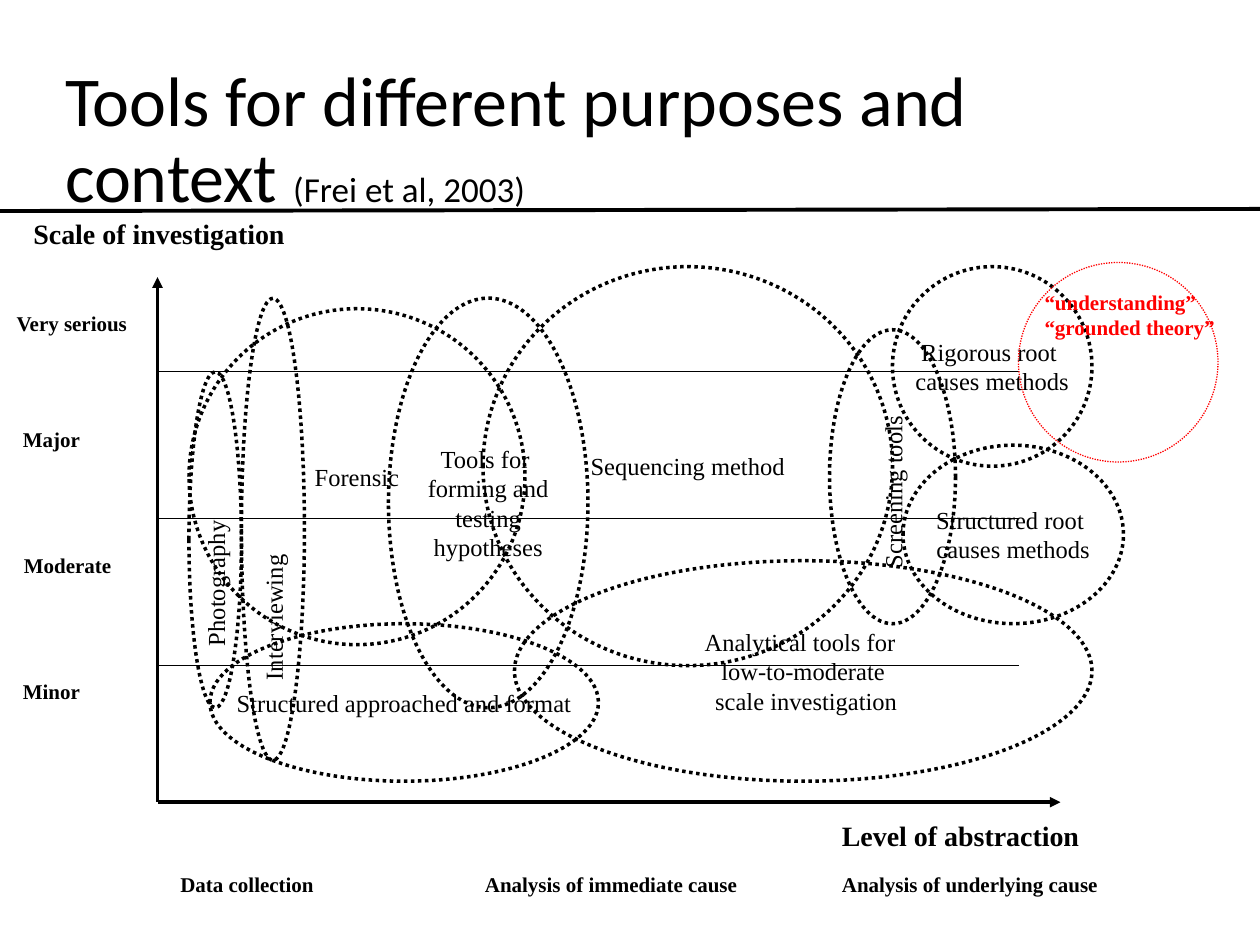
from pptx import Presentation
from pptx.dml.color import RGBColor
from pptx.enum.dml import MSO_LINE
from pptx.enum.shapes import MSO_CONNECTOR, MSO_SHAPE
from pptx.enum.text import MSO_ANCHOR as ANCHOR, MSO_AUTO_SIZE as AUTO, PP_ALIGN as ALIGN
from pptx.oxml.ns import qn
from pptx.util import Pt
from lxml.etree import SubElement

BLACK = RGBColor(0x00, 0x00, 0x00)
RED = RGBColor(0xFF, 0x00, 0x00)
SERIF = "Times New Roman"
SANS = "Calibri"
SCALE = 7620  # EMU per px, 120 px to the inch


def px(*lengths):
    return [round(length * SCALE) for length in lengths]


def write(frame, text, *, size=12, bold=False, color=BLACK, font=SERIF,
          align=ALIGN.LEFT, anchor=ANCHOR.TOP, wrap=False):
    """Fill a text frame, one paragraph for each line of text."""
    frame.word_wrap = wrap
    frame.vertical_anchor = anchor
    for index, line in enumerate(text.split("\n")):
        para = frame.paragraphs[0] if index == 0 else frame.add_paragraph()
        para.alignment = align
        add_span(para, line, size=size, bold=bold, color=color, font=font)


def add_span(para, text, *, size, bold=False, color=BLACK, font=SERIF):
    span = para.add_run()
    span.text = text
    span.font.size = Pt(size)
    span.font.bold = bold
    span.font.name = font
    span.font.color.rgb = color


def add_label(page, text, left, top, width, height, **style):
    box = page.shapes.add_textbox(*px(left, top, width, height))
    write(box.text_frame, text, **style)
    box.text_frame.auto_size = AUTO.SHAPE_TO_FIT_TEXT


def add_line(page, start, end, weight, *, dash=None, head=False, tail=False):
    line = page.shapes.add_connector(MSO_CONNECTOR.STRAIGHT, *px(*start, *end))
    line.line.color.rgb = BLACK
    line.line.width = Pt(weight)
    if dash:
        line.line.dash_style = dash
    outline = line.line._get_or_add_ln()
    for wanted, tag in ((head, "a:headEnd"), (tail, "a:tailEnd")):
        if wanted:
            SubElement(outline, qn(tag), type="triangle")
    SubElement(line._element.spPr, qn("a:effectLst"))


def add_ellipse(page, left, top, width, height, *, color=BLACK, weight=2):
    ellipse = page.shapes.add_shape(MSO_SHAPE.OVAL, *px(left, top, width, height))
    ellipse.shadow.inherit = False
    ellipse.fill.background()
    ellipse.line.color.rgb = color
    ellipse.line.width = Pt(weight)
    ellipse.line.dash_style = MSO_LINE.ROUND_DOT
    return ellipse


def place_title(page, left, top, width, height):
    title = page.shapes.title
    title.left, title.top, title.width, title.height = px(left, top, width, height)
    frame = title.text_frame
    write(frame, "Tools for different purposes and context ", size=40,
          font=SANS, anchor=ANCHOR.MIDDLE, wrap=True)
    frame.auto_size = AUTO.NONE
    para = frame.paragraphs[0]
    para.line_spacing = 0.9
    add_span(para, "(Frei et al, 2003)", size=20, font=SANS)


def place_tools(page, left, top):
    """Dotted ellipses, one per tool; upright ones read from bottom to top."""
    tools = [  # text, offset x, offset y, width, height, upright, mirrored
        ("Photography", 30, 90, 50, 320, True, True),
        ("Interviewing", 80, 20, 60, 440, True, True),
        ("Structured approached and format", 50, 330, 370, 150, False, False),
        ("Forensic", 30, 30, 320, 320, False, False),
        ("Tools for \nforming and\n testing \nhypotheses", 220, 20, 190, 390, False, False),
        ("Sequencing method", 310, -10, 390, 380, False, False),
        ("Analytical tools for \nlow-to-moderate\n scale investigation",
         340, 270, 550, 210, False, False),
        ("Screening tools", 640, 50, 120, 280, True, False),
        ("Rigorous root \ncauses methods", 700, -10, 190, 190, False, False),
        ("Structured root \ncauses methods", 710, 160, 210, 170, False, False),
    ]
    for text, x, y, width, height, upright, mirrored in tools:
        ellipse = add_ellipse(page, left + x, top + y, width, height)
        write(ellipse.text_frame, text, size=14, align=ALIGN.CENTER, anchor=ANCHOR.MIDDLE)
        if upright:
            ellipse.rotation = 180
            ellipse.text_frame._txBody.bodyPr.set("vert", "eaVert")
        if mirrored:
            ellipse._element.spPr.xfrm.set("flipH", "1")


def place_axes(page, left, top, width, height):
    bottom = top + height
    add_line(page, (left, top), (left, bottom), 2, head=True)
    add_line(page, (left, bottom), (left + width, bottom), 2, tail=True)

    # Borders between the four scales
    for step in range(3):
        y = top + 370 - 140 * step
        add_line(page, (left, y), (left + 820, y), 0.25, dash=MSO_LINE.ROUND_DOT)

    # Axis names
    add_label(page, "Level of abstraction", left + 640, bottom + 10, 258, 44,
              size=16, bold=True)
    add_label(page, "Scale of investigation", left - 130, top - 64, 265, 44,
              size=16, bold=True)

    # Axis categories
    for text, x, label_width in (("Analysis of underlying cause", 640, 268),
                                 ("Analysis of immediate cause", 300, 265),
                                 ("Data collection", 10, 151)):
        add_label(page, text, left + x, bottom + 60, label_width, 36, bold=True)
    for text, x, y, label_width in (("Very serious", -146, 26, 132),
                                    ("Major", -140, 136, 79),
                                    ("Moderate", -139, 256, 108),
                                    ("Minor", -140, 376, 79)):
        add_label(page, text, left + x, top + y, label_width, 36, bold=True)


def place_theory(page, left, top, size):
    add_ellipse(page, left, top, size, size, color=RED, weight=0.75)
    add_label(page, "“understanding”\n“grounded theory”", left + 13, top + 20,
              187, 60, bold=True, color=RED, wrap=True)


def main():
    deck = Presentation()
    deck.slide_width, deck.slide_height = px(1200, 900)
    page = deck.slides.add_slide(deck.slide_layouts[5])
    place_tools(page, 150, 264)
    place_axes(page, 150, 264, 860, 500)
    place_theory(page, 970, 250, 190)
    place_title(page, 50, 48, 1067, 174)
    add_line(page, (0, 201), (1200, 199), 2.25)
    deck.save("out.pptx")


if __name__ == "__main__":
    main()
